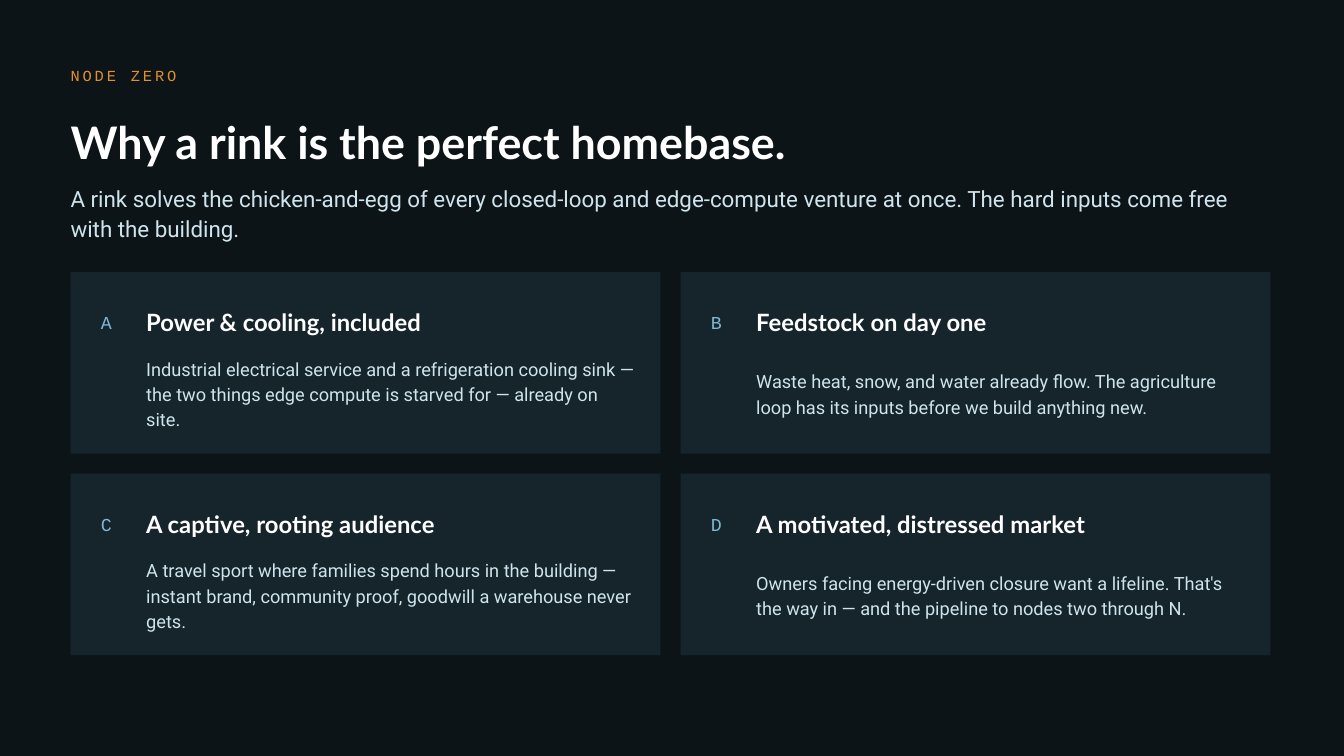
import pptx
import pptx.dml.color
import pptx.enum.shapes
import pptx.enum.text
import pptx.util

COLORS = {
    "background": "0C1418",
    "card": "16242C",
    "accent": "E0902F",
    "title": "FFFFFF",
    "body": "CFE4EC",
    "letter": "7FB8D4",
}
HEADING, BODY, MONO = "Lato", "Roboto", "Courier New"

COLUMNS, ROWS = 133.3, 75
CELL = pptx.util.Inches(0.1)
MARGIN = 7
HEADER = (MARGIN, 6, 120, 18.5)
CARDS = (MARGIN, 27, 119, 38)
CARD_GAP = 2
CARDS_PER_ROW = 2

REASONS = [
    ("A", "Power & cooling, included",
     "Industrial electrical service and a refrigeration cooling sink — the two things "
     "edge compute is starved for — already on site."),
    ("B", "Feedstock on day one",
     "Waste heat, snow, and water already flow. The agriculture loop has its inputs "
     "before we build anything new."),
    ("C", "A captive, rooting audience",
     "A travel sport where families spend hours in the building — instant brand, "
     "community proof, goodwill a warehouse never gets."),
    ("D", "A motivated, distressed market",
     "Owners facing energy-driven closure want a lifeline. That's the way in — and the "
     "pipeline to nodes two through N."),
]


def color(name):
    """Return the named palette colour."""
    return pptx.dml.color.RGBColor.from_string(COLORS[name])


def to_lengths(box):
    """Turn a box in grid cells into slide lengths."""
    return [round(cells * CELL) for cells in box]


def add_text(slide, box, text, font_name, size, color_name,
             bold=False, line_spacing=None, tracking=None):
    """Place one paragraph, vertically centred, in a box without insets."""
    frame = slide.shapes.add_textbox(*to_lengths(box)).text_frame
    frame.word_wrap = True
    frame.vertical_anchor = pptx.enum.text.MSO_ANCHOR.MIDDLE
    frame.margin_left = frame.margin_right = frame.margin_top = frame.margin_bottom = 0
    paragraph = frame.paragraphs[0]
    run = paragraph.add_run()
    run.text = text
    if line_spacing:
        paragraph.line_spacing = pptx.util.Pt(line_spacing)
    if tracking:
        run._r.get_or_add_rPr().set("spc", str(tracking * 100))
    font = paragraph.font
    font.name = font_name
    font.size = pptx.util.Pt(size)
    font.bold = bold
    font.color.rgb = color(color_name)


def add_header(slide, box):
    """Place the kicker, title and introduction."""
    left, top, width, height = box
    add_text(slide, (left, top, 50, 3), "NODE ZERO", MONO, 11, "accent", tracking=2)
    add_text(slide, (left, top + 4, width, 8), "Why a rink is the perfect homebase.",
             HEADING, 32, "title", bold=True)
    add_text(slide, (left, top + height - 7, width - 5, 7),
             "A rink solves the chicken-and-egg of every closed-loop and edge-compute "
             "venture at once. The hard inputs come free with the building.",
             BODY, 16, "body", line_spacing=22)


def add_card(slide, box, letter, heading, text):
    """Place one lettered reason on its panel."""
    left, top, width, height = box
    panel = slide.shapes.add_shape(pptx.enum.shapes.MSO_SHAPE.RECTANGLE, *to_lengths(box))
    panel.shadow.inherit = False
    panel.fill.solid()
    panel.fill.fore_color.rgb = color("card")
    panel.line.fill.background()
    text_left, text_width = left + 7.5, width - 10
    add_text(slide, (left + 3, top + 3, 5, 4), letter, MONO, 13, "letter")
    add_text(slide, (text_left, top + 2.7, text_width - 0.5, 4.5), heading,
             HEADING, 17, "title", bold=True)
    add_text(slide, (text_left, top + 7.2, text_width, height - 8.5), text,
             BODY, 13, "body", line_spacing=18)


def add_cards(slide, box):
    """Lay the reasons out in an even grid."""
    left, top, width, height = box
    row_count = -(-len(REASONS) // CARDS_PER_ROW)
    card_width = (width - CARD_GAP * (CARDS_PER_ROW - 1)) / CARDS_PER_ROW
    card_height = (height - CARD_GAP * (row_count - 1)) / row_count
    for index, reason in enumerate(REASONS):
        row, column = divmod(index, CARDS_PER_ROW)
        card_box = (left + column * (card_width + CARD_GAP),
                    top + row * (card_height + CARD_GAP), card_width, card_height)
        add_card(slide, card_box, *reason)


def main():
    """Build and save the presentation."""
    presentation = pptx.Presentation()
    presentation.slide_width, presentation.slide_height = to_lengths((COLUMNS, ROWS))
    slide = presentation.slides.add_slide(presentation.slide_layouts[6])
    slide.background.fill.solid()
    slide.background.fill.fore_color.rgb = color("background")
    add_header(slide, HEADER)
    add_cards(slide, CARDS)
    presentation.save("out.pptx")


if __name__ == "__main__":
    main()
